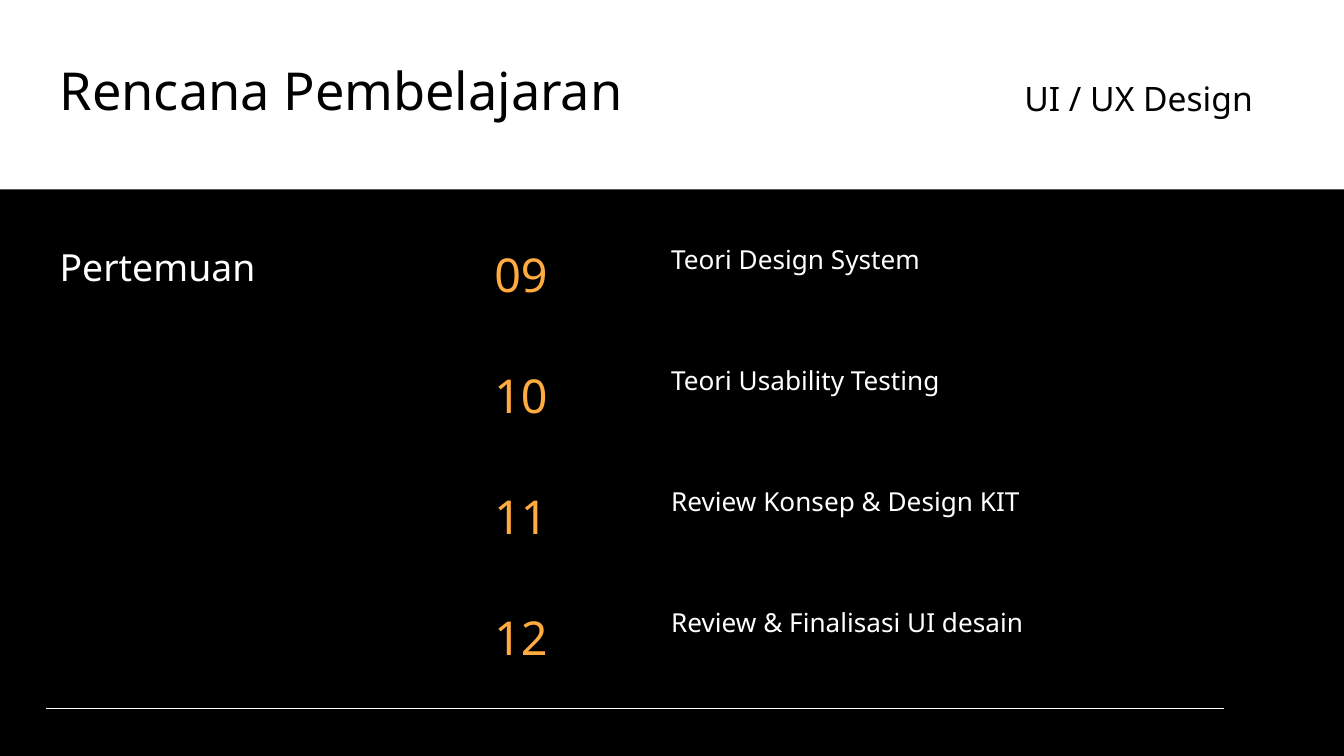
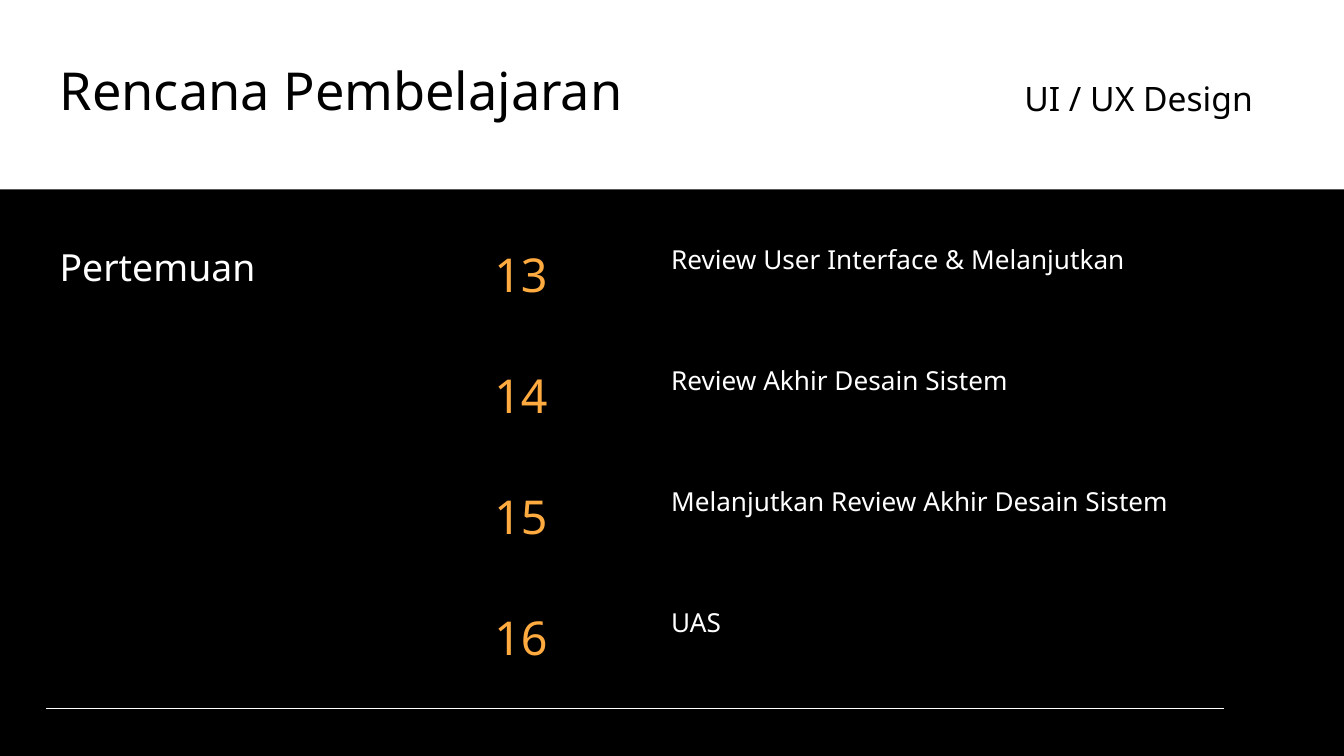
from lxml import etree
from pptx import Presentation
from pptx.dml.color import RGBColor
from pptx.enum.shapes import MSO_CONNECTOR, MSO_SHAPE
from pptx.enum.text import MSO_ANCHOR, MSO_AUTO_SIZE, PP_ALIGN
from pptx.oxml.ns import qn
from pptx.util import Pt

RECT = MSO_SHAPE.RECTANGLE
LINE = MSO_CONNECTOR.STRAIGHT
TOP = MSO_ANCHOR.TOP
GROW, FIXED = MSO_AUTO_SIZE.SHAPE_TO_FIT_TEXT, MSO_AUTO_SIZE.NONE
LEFT, RIGHT = PP_ALIGN.LEFT, PP_ALIGN.RIGHT

PX = 4572  # EMU in one px, 200 px to the inch
WIDE, HIGH = 2000, 1125
EDGE = 69  # left margin
FIRST, STEP = 334, 180  # top of the first row, row pitch
SPANS = [834, 906, 834, 834]  # topic widths by row
FONT = "Noto Sans"
COLORS = {"black": "000000", "white": "FFFFFF", "orange": "FFAB40"}

PLANS = [
    (9, ["Teori Design System", "Teori Usability Testing",
         "Review Konsep & Design KIT", "Review & Finalisasi UI desain"]),
    (13, ["Review User Interface & Melanjutkan", "Review Akhir Desain Sistem",
          "Melanjutkan Review Akhir Desain Sistem", "UAS"]),
]


def color(name):
    return RGBColor.from_string(COLORS[name])


def write(shape, box, text, size, ink, gap=1.15, after=12, align=LEFT, fit=GROW):
    shape.left, shape.top, shape.width, shape.height = [n * PX for n in box]
    frame = shape.text_frame
    frame.word_wrap = True
    frame.auto_size = fit
    frame.vertical_anchor = TOP
    frame.margin_left = frame.margin_right = 20 * PX
    frame.margin_top = frame.margin_bottom = 20 * PX
    frame.text = text
    para = frame.paragraphs[0]
    para.alignment = align
    para.line_spacing = gap
    para.space_before, para.space_after = Pt(0), Pt(after)
    para.font.name = FONT
    para.font.size = Pt(size)
    para.font.color.rgb = color(ink)


prs = Presentation()
prs.slide_width, prs.slide_height = WIDE * PX, HIGH * PX
layout = prs.slide_layouts.get_by_name("Title Only")

for start, topics in PLANS:
    slide = prs.slides.add_slide(layout)
    shapes = slide.shapes
    slide.background.fill.solid()
    slide.background.fill.fore_color.rgb = color("black")

    # Header band, set behind the title
    band = shapes.add_shape(RECT, 0, -2 * PX, WIDE * PX, 284 * PX)
    band.shadow.inherit = False
    band.fill.solid()
    band.fill.fore_color.rgb = color("white")
    band.line.fill.background()
    shapes.title._element.addprevious(band._element)

    # Title, course and row heading
    write(shapes.title, (EDGE, 77, 1864, 126), "Rencana Pembelajaran", 28, "black",
          gap=0.9, after=0, fit=FIXED)
    course = shapes.add_textbox(0, 0, 0, 0)
    write(course, (1000, 87, 884, 100), "UI / UX Design", 18, "black", align=RIGHT)
    head = shapes.add_textbox(0, 0, 0, 0)
    write(head, (EDGE, FIRST, 430, 108), "Pertemuan", 20, "white")

    # Meeting numbers and topics
    for row, (topic, span) in enumerate(zip(topics, SPANS)):
        top = FIRST + row * STEP
        num = shapes.add_textbox(0, 0, 0, 0)
        write(num, (716, top, 234, 124), f"{start + row:02}", 25, "orange")
        label = shapes.add_textbox(0, 0, 0, 0)
        write(label, (979, top + 8, span, 88), topic, 14, "white", gap=1.0, after=0)

    # Footer rule
    rule = shapes.add_connector(LINE, EDGE * PX, 1054 * PX, 1821 * PX, 1054 * PX)
    rule.line.color.rgb = color("white")
    rule.line.width = Pt(0.75)
    etree.SubElement(rule._element.spPr, qn("a:effectLst"))

prs.save("out.pptx")
